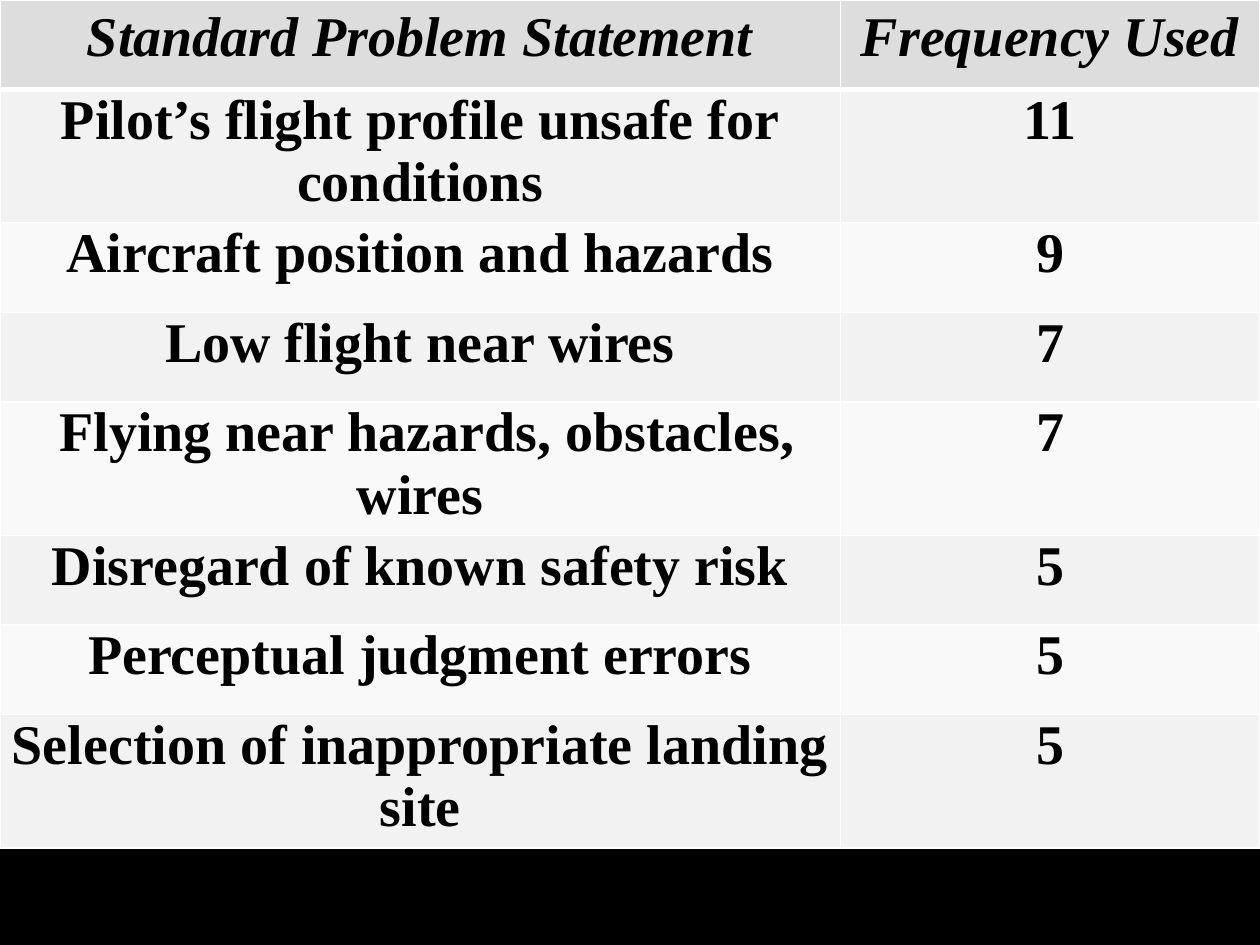
import dataclasses

import pptx
import pptx.dml.color
import pptx.enum.text
import pptx.oxml
import pptx.oxml.ns
import pptx.table
import pptx.util
from pptx.util import Inches

COLORS = {
    "background": "000000",
    "text": "000000",
    "border": "FFFFFF",
    "header": "DDDDDD",
    "odd": "F2F2F2",
    "even": "F9F9F9",
}
FONT = "Times New Roman"
COLUMN_WIDTHS = (6.67, 3.33)
ONE_LINE, TWO_LINES = 0.71, 1.06


@dataclasses.dataclass
class Problem:
    statement: str
    frequency: int
    height: float = ONE_LINE


PROBLEMS = [
    Problem("Pilot’s flight profile unsafe for conditions", 11, TWO_LINES),
    Problem("Aircraft position and hazards", 9),
    Problem("Low flight near wires", 7),
    Problem(" Flying near hazards, obstacles, wires", 7, TWO_LINES),
    Problem("Disregard of known safety risk", 5),
    Problem("Perceptual judgment errors", 5),
    Problem("Selection of inappropriate landing site", 5, TWO_LINES),
]


def rgb(name: str) -> pptx.dml.color.RGBColor:
    return pptx.dml.color.RGBColor.from_string(COLORS[name])


def set_borders(cell: pptx.table._Cell, top: float, bottom: float) -> None:
    """Draw the four cell borders, with widths in points."""
    tc_pr = cell._tc.get_or_add_tcPr()
    widths = {"lnL": 1, "lnR": 1, "lnT": top, "lnB": bottom}
    for i, (tag, width) in enumerate(widths.items()):
        line = pptx.oxml.parse_xml(
            f'<a:{tag} {pptx.oxml.ns.nsdecls("a")} w="{pptx.util.Pt(width)}">'
            f'<a:solidFill><a:srgbClr val="{COLORS["border"]}"/></a:solidFill>'
            f"</a:{tag}>"
        )
        tc_pr.insert(i, line)


def fill_cell(cell: pptx.table._Cell, text: str, fill: str, header: bool) -> None:
    cell.fill.solid()
    cell.fill.fore_color.rgb = rgb(fill)
    if not header:
        cell.margin_left = cell.margin_right = Inches(0.07)
        cell.margin_top = cell.margin_bottom = 0
    p = cell.text_frame.paragraphs[0]
    p.text = text
    p.alignment = pptx.enum.text.PP_ALIGN.CENTER
    p.font.name = FONT
    p.font.size = pptx.util.Pt(32)
    p.font.bold = True
    p.font.italic = header
    p.font.color.rgb = rgb("text")


def add_problem_table(slide: pptx.slide.Slide) -> None:
    heights = [ONE_LINE] + [problem.height for problem in PROBLEMS]
    texts = [("Standard Problem Statement", "Frequency Used")]
    texts += [(problem.statement, str(problem.frequency)) for problem in PROBLEMS]
    table = slide.shapes.add_table(
        len(texts), len(COLUMN_WIDTHS), 0, 0,
        Inches(sum(COLUMN_WIDTHS)), Inches(sum(heights)),
    ).table
    for column, width in zip(table.columns, COLUMN_WIDTHS):
        column.width = Inches(width)

    # Header row, then banded problem rows
    for i, (row, height, row_texts) in enumerate(zip(table.rows, heights, texts)):
        row.height = Inches(height)
        fill = "header" if i == 0 else "odd" if i % 2 else "even"
        for cell, text in zip(row.cells, row_texts):
            fill_cell(cell, text, fill, header=i == 0)
            set_borders(cell, top=3 if i == 1 else 1, bottom=3 if i == 0 else 1)


def main() -> None:
    prs = pptx.Presentation()
    prs.slide_width, prs.slide_height = Inches(10), Inches(7.5)
    slide = prs.slides.add_slide(prs.slide_layouts[6])

    # Black background
    slide.background.fill.solid()
    slide.background.fill.fore_color.rgb = rgb("background")

    add_problem_table(slide)
    prs.save("out.pptx")


if __name__ == "__main__":
    main()
